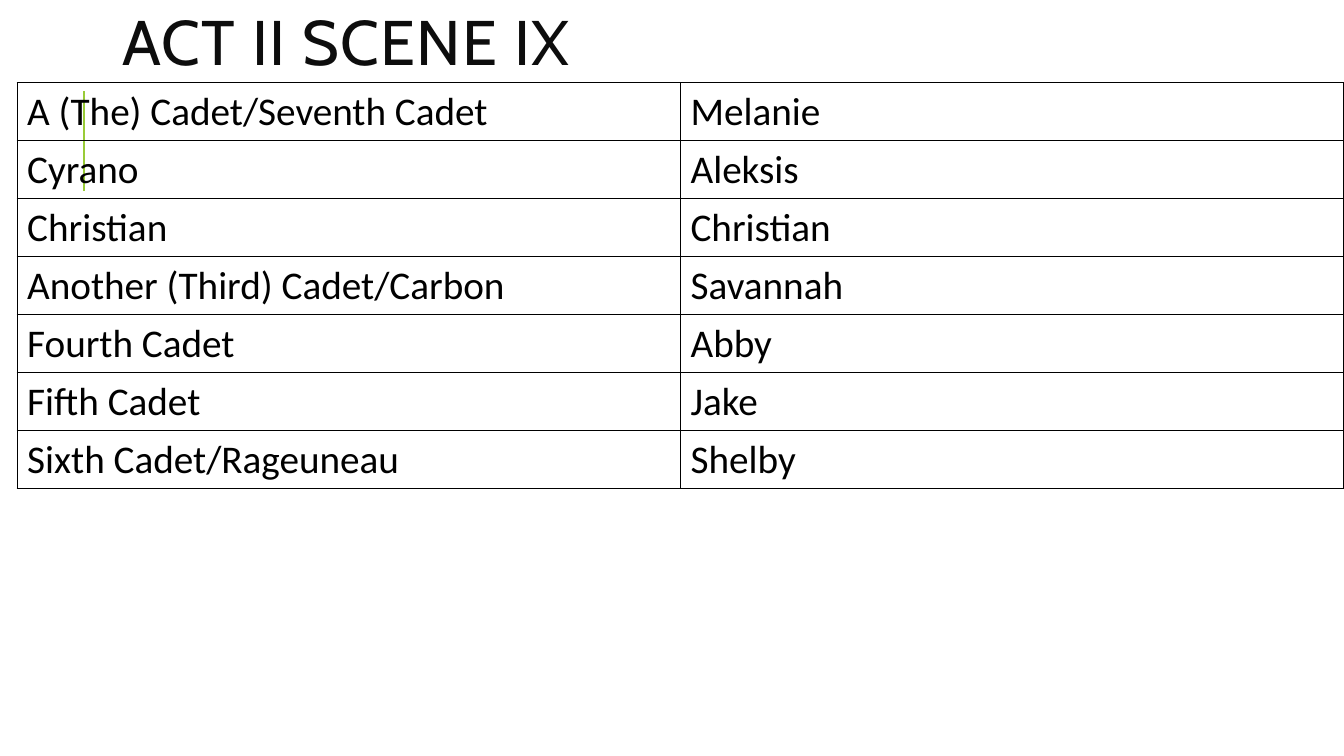
from lxml import etree
from pptx import Presentation
from pptx.dml.color import RGBColor
from pptx.enum.shapes import MSO_CONNECTOR
from pptx.enum.text import MSO_ANCHOR, MSO_AUTO_SIZE, PP_ALIGN
from pptx.oxml.ns import qn
from pptx.util import Inches, Pt

STRAIGHT = MSO_CONNECTOR.STRAIGHT
MIDDLE = MSO_ANCHOR.MIDDLE
NO_AUTOFIT = MSO_AUTO_SIZE.NONE
LEFT = PP_ALIGN.LEFT

WIDTH, HEIGHT = 13.33, 7.5
COLORS = {"title": "0D0D0D", "text": "000000", "border": "000000", "accent": "99CB38"}
CAST = [
    ("A (The) Cadet/Seventh Cadet", "Melanie"),
    ("Cyrano", "Aleksis"),
    ("Christian", "Christian"),
    ("Another (Third) Cadet/Carbon", "Savannah"),
    ("Fourth Cadet", "Abby"),
    ("Fifth Cadet", "Jake"),
    ("Sixth Cadet/Rageuneau", "Shelby"),
]


def color(name):
    return RGBColor.from_string(COLORS[name])


def format_run(r, font, size, color_name):
    r.font.name = font
    r.font.size = Pt(size)
    r.font.bold = False
    r.font.color.rgb = color(color_name)


def set_title(s, text, left, top, width, height):
    sp = s.shapes.title
    sp.left, sp.top = Inches(left), Inches(top)
    sp.width, sp.height = Inches(width), Inches(height)
    tf = sp.text_frame
    tf.text = text
    tf.word_wrap = True
    tf.auto_size = NO_AUTOFIT
    tf.vertical_anchor = MIDDLE
    p = tf.paragraphs[0]
    p.alignment = LEFT
    p.line_spacing = 0.8
    r = p.runs[0]
    format_run(r, "Cabin", 45, "title")
    r.font._element.set("spc", "100")


def add_accent_line(s, x, top, bottom):
    line = s.shapes.add_connector(STRAIGHT, Inches(x), Inches(bottom), Inches(x), Inches(top))
    line.line.color.rgb = color("accent")
    line.line.width = Pt(1.5)
    etree.SubElement(line._element.spPr, qn("a:effectLst"))


def add_borders(cell):
    tcPr = cell._tc.get_or_add_tcPr()
    for i, side in enumerate(("lnL", "lnR", "lnT", "lnB")):
        ln = etree.Element(qn(f"a:{side}"), w=str(Pt(1)))
        fill = etree.SubElement(ln, qn("a:solidFill"))
        etree.SubElement(fill, qn("a:srgbClr"), val=COLORS["border"])
        tcPr.insert(i, ln)


def fill_cell(cell, text):
    cell.text = text
    cell.fill.background()
    format_run(cell.text_frame.paragraphs[0].runs[0], "Calibri", 28, "text")
    add_borders(cell)


def add_cast_table(s, cast, left, top, width, height):
    table = s.shapes.add_table(
        len(cast), len(cast[0]), Inches(left), Inches(top), Inches(width), Inches(height)
    ).table
    table.first_row = False
    table.horz_banding = False
    for i, names in enumerate(cast):
        for j, name in enumerate(names):
            fill_cell(table.cell(i, j), name)


def main():
    prs = Presentation()
    prs.slide_width, prs.slide_height = Inches(WIDTH), Inches(HEIGHT)
    s = prs.slides.add_slide(prs.slide_layouts[5])
    add_accent_line(s, WIDTH / 16, HEIGHT * 0.12, HEIGHT * 0.253)
    set_title(s, "ACT II SCENE IX", WIDTH / 12, 0.12, 10.63, 0.7)
    add_cast_table(s, CAST, 0.17, 0.82, WIDTH - 0.17, 3.97)
    prs.save("out.pptx")


if __name__ == "__main__":
    main()
